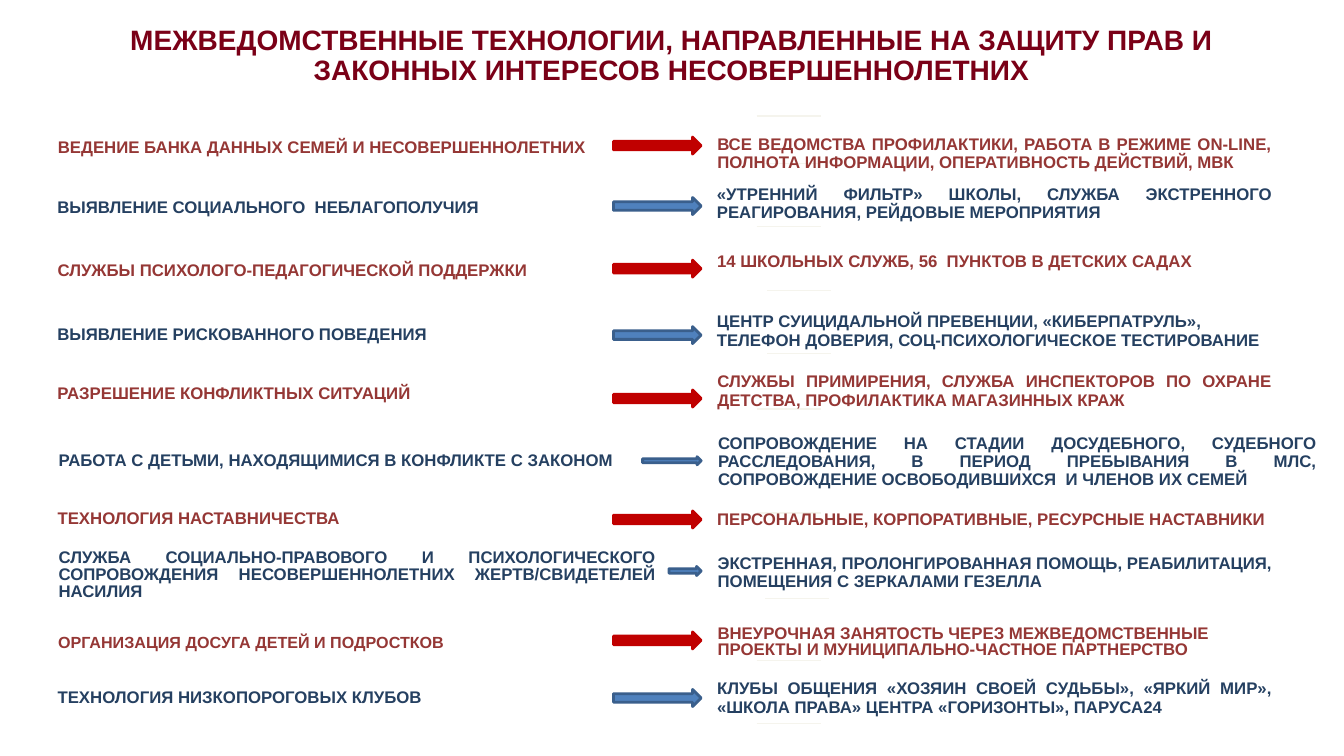
from dataclasses import dataclass

from lxml import etree
from pptx import Presentation
from pptx.dml.color import RGBColor
from pptx.enum.shapes import MSO_CONNECTOR, MSO_SHAPE
from pptx.enum.text import MSO_ANCHOR, PP_ALIGN
from pptx.oxml.ns import qn
from pptx.slide import Slide
from pptx.text.text import TextFrame
from pptx.util import Length, Pt

LEFT, CENTER, JUSTIFY = PP_ALIGN.LEFT, PP_ALIGN.CENTER, PP_ALIGN.JUSTIFY
MIDDLE = MSO_ANCHOR.MIDDLE
ROUND_RECT, ARROW = MSO_SHAPE.ROUNDED_RECTANGLE, MSO_SHAPE.RIGHT_ARROW
STRAIGHT = MSO_CONNECTOR.STRAIGHT


@dataclass(frozen=True)
class Theme:
    font: str = "Arial"
    title: str = "7A0017"
    red: str = "953735"
    blue: str = "254061"
    red_arrow: str = "C00000"
    blue_arrow: str = "4F81BD"
    blue_arrow_line: str = "3A5F8C"
    rule: str = "F5F4ED"
    title_size: float = 20
    body_size: float = 12
    small_size: float = 11.5


THEME = Theme()
TECH_X, RESULT_X, ARROW_END = 25.2, 504.7, 500.8
RULE_WIDTH = 45.4


@dataclass(frozen=True)
class Label:
    text: str
    top: float
    height: float
    width: float
    align: PP_ALIGN = LEFT
    size: float = THEME.body_size
    spacing: float | Length = 0.9


@dataclass(frozen=True)
class Tech(Label):
    width: float = 421.5
    spacing: float | Length = Pt(12)


@dataclass(frozen=True)
class Result(Label):
    width: float = 411.5


@dataclass(frozen=True)
class Arrow:
    top: float
    width: float = 62.6
    height: float = 12.2


@dataclass(frozen=True)
class Row:
    tech: Tech
    arrow: Arrow
    result: Result


TITLE = ("МЕЖВЕДОМСТВЕННЫЕ ТЕХНОЛОГИИ, НАПРАВЛЕННЫЕ НА ЗАЩИТУ ПРАВ И "
         "ЗАКОННЫХ ИНТЕРЕСОВ НЕСОВЕРШЕННОЛЕТНИХ")

ROWS = [
    Row(Tech("ВЕДЕНИЕ БАНКА ДАННЫХ СЕМЕЙ И НЕСОВЕРШЕННОЛЕТНИХ", 90.7, 31),
        Arrow(97.9),
        Result("ВСЕ ВЕДОМСТВА ПРОФИЛАКТИКИ, РАБОТА В РЕЖИМЕ ON-LINE, ПОЛНОТА "
               "ИНФОРМАЦИИ, ОПЕРАТИВНОСТЬ ДЕЙСТВИЙ, МВК", 94.3, 31, align=JUSTIFY)),
    Row(Tech("ВЫЯВЛЕНИЕ СОЦИАЛЬНОГО  НЕБЛАГОПОЛУЧИЯ", 135.4, 26.6),
        Arrow(141.1),
        Result("«УТРЕННИЙ ФИЛЬТР» ШКОЛЫ, СЛУЖБА ЭКСТРЕННОГО РЕАГИРОВАНИЯ, "
               "РЕЙДОВЫЕ МЕРОПРИЯТИЯ", 132.5, 26.6, align=JUSTIFY)),
    Row(Tech("СЛУЖБЫ ПСИХОЛОГО-ПЕДАГОГИЧЕСКОЙ ПОДДЕРЖКИ", 179.3, 28.8),
        Arrow(185.8),
        Result("14 ШКОЛЬНЫХ СЛУЖБ, 56  ПУНКТОВ В ДЕТСКИХ САДАХ", 172.8, 28.8)),
    Row(Tech("ВЫЯВЛЕНИЕ РИСКОВАННОГО ПОВЕДЕНИЯ", 226.1, 26.6),
        Arrow(233.3),
        Result("ЦЕНТР СУИЦИДАЛЬНОЙ ПРЕВЕНЦИИ, «КИБЕРПАТРУЛЬ», ТЕЛЕФОН ДОВЕРИЯ, "
               "СОЦ-ПСИХОЛОГИЧЕСКОЕ ТЕСТИРОВАНИЕ", 223.9, 25.9)),
    Row(Tech("РАЗРЕШЕНИЕ КОНФЛИКТНЫХ СИТУАЦИЙ", 268.6, 25.9),
        Arrow(278.6),
        Result("СЛУЖБЫ ПРИМИРЕНИЯ, СЛУЖБА ИНСПЕКТОРОВ ПО ОХРАНЕ ДЕТСТВА, "
               "ПРОФИЛАКТИКА МАГАЗИННЫХ КРАЖ", 263.5, 32.4, align=JUSTIFY)),
    Row(Tech("РАБОТА С ДЕТЬМИ, НАХОДЯЩИМИСЯ В КОНФЛИКТЕ С ЗАКОНОМ", 309.6, 40.3,
             align=JUSTIFY),
        Arrow(326.2, 41.8, 5.8),
        Result("СОПРОВОЖДЕНИЕ НА СТАДИИ ДОСУДЕБНОГО, СУДЕБНОГО РАССЛЕДОВАНИЯ, "
               "В ПЕРИОД ПРЕБЫВАНИЯ В МЛС, СОПРОВОЖДЕНИЕ ОСВОБОДИВШИХСЯ  И ЧЛЕНОВ "
               "ИХ СЕМЕЙ", 309.6, 41, 444.2, JUSTIFY)),
    Row(Tech("ТЕХНОЛОГИЯ НАСТАВНИЧЕСТВА", 357.1, 28.1),
        Arrow(365),
        Result("ПЕРСОНАЛЬНЫЕ, КОРПОРАТИВНЫЕ, РЕСУРСНЫЕ НАСТАВНИКИ", 357.1, 28.1, 414)),
    Row(Tech("СЛУЖБА СОЦИАЛЬНО-ПРАВОВОГО И ПСИХОЛОГИЧЕСКОГО СОПРОВОЖДЕНИЯ "
             "НЕСОВЕРШЕННОЛЕТНИХ ЖЕРТВ/СВИДЕТЕЛЕЙ НАСИЛИЯ", 391, 40.3, 445.7, JUSTIFY),
        Arrow(404.6, 23, 6.5),
        Result("ЭКСТРЕННАЯ, ПРОЛОНГИРОВАННАЯ ПОМОЩЬ, РЕАБИЛИТАЦИЯ, ПОМЕЩЕНИЯ "
               "С ЗЕРКАЛАМИ ГЕЗЕЛЛА", 391, 36.7, 444.2)),
    Row(Tech("ОРГАНИЗАЦИЯ ДОСУГА ДЕТЕЙ И ПОДРОСТКОВ", 442.1, 34.6,
             size=THEME.small_size),
        Arrow(451.4),
        Result("ВНЕУРОЧНАЯ ЗАНЯТОСТЬ ЧЕРЕЗ МЕЖВЕДОМСТВЕННЫЕ ПРОЕКТЫ И "
               "МУНИЦИПАЛЬНО-ЧАСТНОЕ ПАРТНЕРСТВО", 442.1, 34.6, 414, spacing=Pt(11))),
    Row(Tech("ТЕХНОЛОГИЯ НИЗКОПОРОГОВЫХ КЛУБОВ", 484.6, 28.8),
        Arrow(492.5),
        Result("КЛУБЫ ОБЩЕНИЯ «ХОЗЯИН СВОЕЙ СУДЬБЫ», «ЯРКИЙ МИР», «ШКОЛА ПРАВА» "
               "ЦЕНТРА «ГОРИЗОНТЫ», ПАРУСА24", 484.6, 28.8, align=JUSTIFY)),
]

# Left end and height of each faint rule between the rows
RULES = [(540.7, 82.8), (540.7, 116.6), (540.7, 162), (547.9, 207.4), (547.9, 252.7),
         (540.7, 292.3), (548.6, 326.9), (540.7, 366.5), (546.5, 427.7),
         (540.7, 471.6), (540.7, 517)]


def set_text(tf: TextFrame, text: str, size: float, color: str, align: PP_ALIGN,
             spacing: float | Length, insets: tuple[float, float, float, float]) -> None:
    """Write one bold paragraph; insets run left, top, right, bottom."""
    tf.word_wrap = True
    tf.margin_left, tf.margin_top, tf.margin_right, tf.margin_bottom = map(Pt, insets)
    tf.text = text
    p = tf.paragraphs[0]
    p.alignment, p.line_spacing = align, spacing
    font = p.runs[0].font
    font.name, font.size, font.bold = THEME.font, Pt(size), True
    font.color.rgb = RGBColor.from_string(color)


def add_label(s: Slide, label: Label, x: float, color: str,
              insets: tuple[float, float, float, float], indent: float = 0) -> None:
    sp = s.shapes.add_shape(ROUND_RECT, Pt(x), Pt(label.top), Pt(label.width),
                            Pt(label.height))
    sp.adjustments[0] = 0.2
    sp.shadow.inherit = False
    sp.fill.background()
    sp.line.fill.background()
    tf = sp.text_frame
    tf.vertical_anchor = MIDDLE
    set_text(tf, label.text, label.size, color, label.align, label.spacing, insets)
    pPr = tf.paragraphs[0]._p.get_or_add_pPr()
    pPr.set("marL", str(Pt(indent)))
    pPr.set("indent", "0")


def add_arrow(s: Slide, arrow: Arrow, fill: str, line: str) -> None:
    sp = s.shapes.add_shape(ARROW, Pt(ARROW_END - arrow.width), Pt(arrow.top),
                            Pt(arrow.width), Pt(arrow.height))
    sp.shadow.inherit = False
    sp.fill.solid()
    sp.fill.fore_color.rgb = RGBColor.from_string(fill)
    sp.line.color.rgb = RGBColor.from_string(line)
    sp.line.width = Pt(2)


def add_rule(s: Slide, x: float, y: float) -> None:
    rule = s.shapes.add_connector(STRAIGHT, Pt(x), Pt(y), Pt(x + RULE_WIDTH), Pt(y))
    rule.line.color.rgb = RGBColor.from_string(THEME.rule)
    rule.line.width = Pt(1)
    etree.SubElement(rule._element.spPr, qn("a:effectLst"))


def main() -> None:
    prs = Presentation()
    prs.slide_width, prs.slide_height = Pt(960), Pt(540)
    s = prs.slides.add_slide(prs.slide_layouts[6])
    for x, y in RULES:
        add_rule(s, x, y)
    title = s.shapes.add_textbox(Pt(52.6), Pt(15.1), Pt(854), Pt(50.4))
    set_text(title.text_frame, TITLE, THEME.title_size, THEME.title, CENTER, 0.9,
             (6.5, 3.6, 6.5, 3.6))
    for i, row in enumerate(ROWS):
        if i % 2 == 0:
            color, fill, line = THEME.red, THEME.red_arrow, THEME.red_arrow
        else:
            color, fill, line = THEME.blue, THEME.blue_arrow, THEME.blue_arrow_line
        add_label(s, row.tech, TECH_X, color, (7.2, 3.6, 0, 3.6), indent=7.2)
        add_label(s, row.result, RESULT_X, color, (5.8, 0, 5.8, 0))
        add_arrow(s, row.arrow, fill, line)
    prs.save("out.pptx")


if __name__ == "__main__":
    main()
